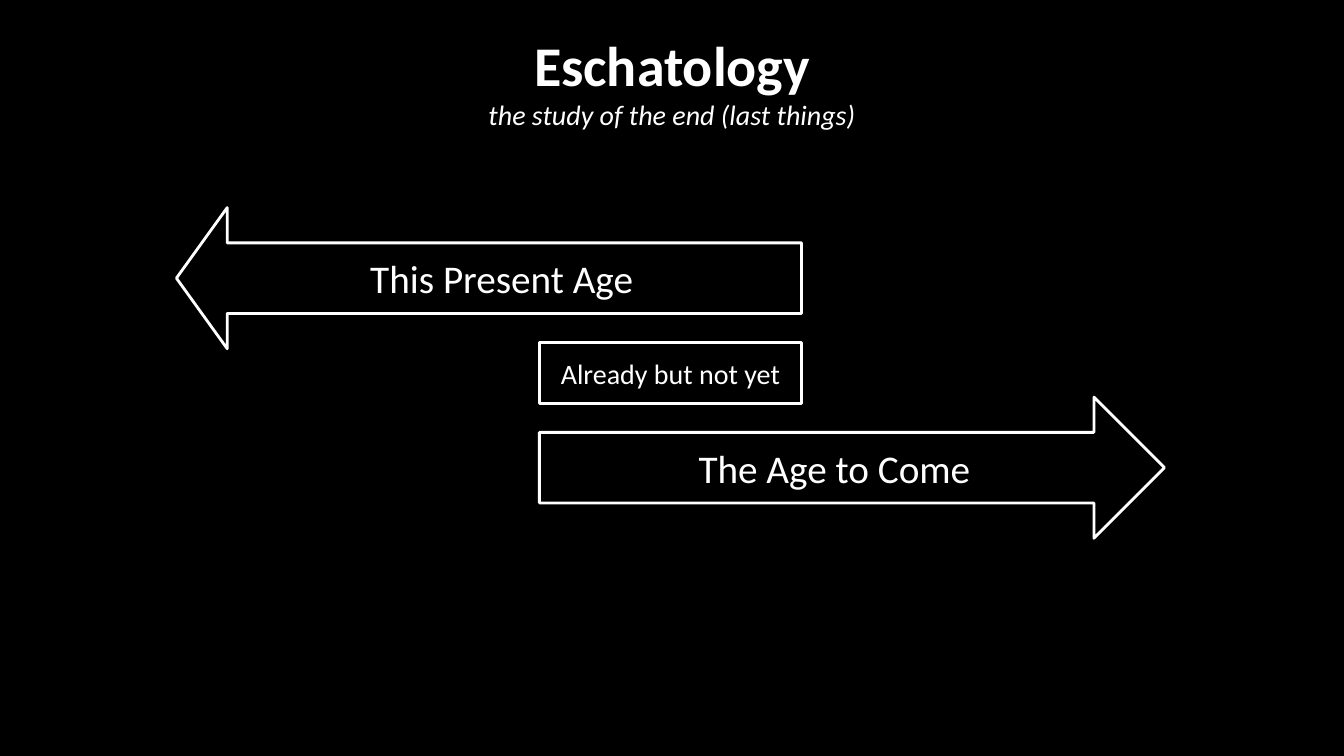
from dataclasses import dataclass

from pptx import Presentation
from pptx import util as u
from pptx.dml.color import RGBColor
from pptx.enum import shapes, text

FONT = "Calibri"
WHITE = "FFFFFF"
BLACK = "000000"


@dataclass
class Age:
    label: str
    kind: shapes.MSO_SHAPE
    left: float
    top: float
    width: float
    height: float
    size: int
    line: float
    wrap: bool = True
    inset: float = 0.1
    head: float = 0.5


AGES = [
    Age("Already but not yet", shapes.MSO_SHAPE.RECTANGLE,
        5.35, 3.4, 2.6, 0.6, 20, 2.25, wrap=False),
    Age("This Present Age", shapes.MSO_SHAPE.LEFT_ARROW,
        1.75, 2.06, 6.2, 1.4, 28, 2, inset=0.2, head=0.36),
    Age("The Age to Come", shapes.MSO_SHAPE.RIGHT_ARROW,
        5.35, 3.94, 6.2, 1.4, 28, 2, inset=0.2),
]


def color(value: str) -> RGBColor:
    return RGBColor.from_string(value)


def style(p, size: int, bold: bool = False, italic: bool = False) -> None:
    p.alignment = text.PP_ALIGN.CENTER
    p.font.name = FONT
    p.font.size = u.Pt(size)
    p.font.bold = bold
    p.font.italic = italic
    p.font.color.rgb = color(WHITE)


def add_heading(s) -> None:
    box = s.shapes.add_textbox(u.Inches(0.22), u.Inches(0.25),
                               u.Inches(12.89), u.Inches(6.83))
    tf = box.text_frame
    tf.word_wrap = True
    title = tf.paragraphs[0]
    title.text = "Eschatology"
    style(title, 40, bold=True)
    subtitle = tf.add_paragraph()
    subtitle.text = "the study of the end (last things)"
    subtitle.space_after = u.Pt(12)
    style(subtitle, 20, italic=True)


def add_age(s, age: Age) -> None:
    sp = s.shapes.add_shape(age.kind, u.Inches(age.left), u.Inches(age.top),
                            u.Inches(age.width), u.Inches(age.height))
    sp.shadow.inherit = False
    sp.fill.background()
    sp.line.color.rgb = color(WHITE)
    sp.line.width = u.Pt(age.line)
    if age.kind != shapes.MSO_SHAPE.RECTANGLE:
        sp.adjustments[1] = age.head
    tf = sp.text_frame
    tf.word_wrap = age.wrap
    tf.vertical_anchor = text.MSO_ANCHOR.MIDDLE
    tf.margin_left = tf.margin_right = u.Inches(age.inset)
    tf.margin_top = tf.margin_bottom = u.Inches(age.inset / 2)
    p = tf.paragraphs[0]
    p.text = age.label
    style(p, age.size)


def main() -> None:
    prs = Presentation()
    prs.slide_width = u.Inches(13.33)
    prs.slide_height = u.Inches(7.5)
    s = prs.slides.add_slide(prs.slide_layouts[6])
    s.background.fill.solid()
    s.background.fill.fore_color.rgb = color(BLACK)
    add_heading(s)
    for age in AGES:
        add_age(s, age)
    prs.save("out.pptx")


if __name__ == "__main__":
    main()
